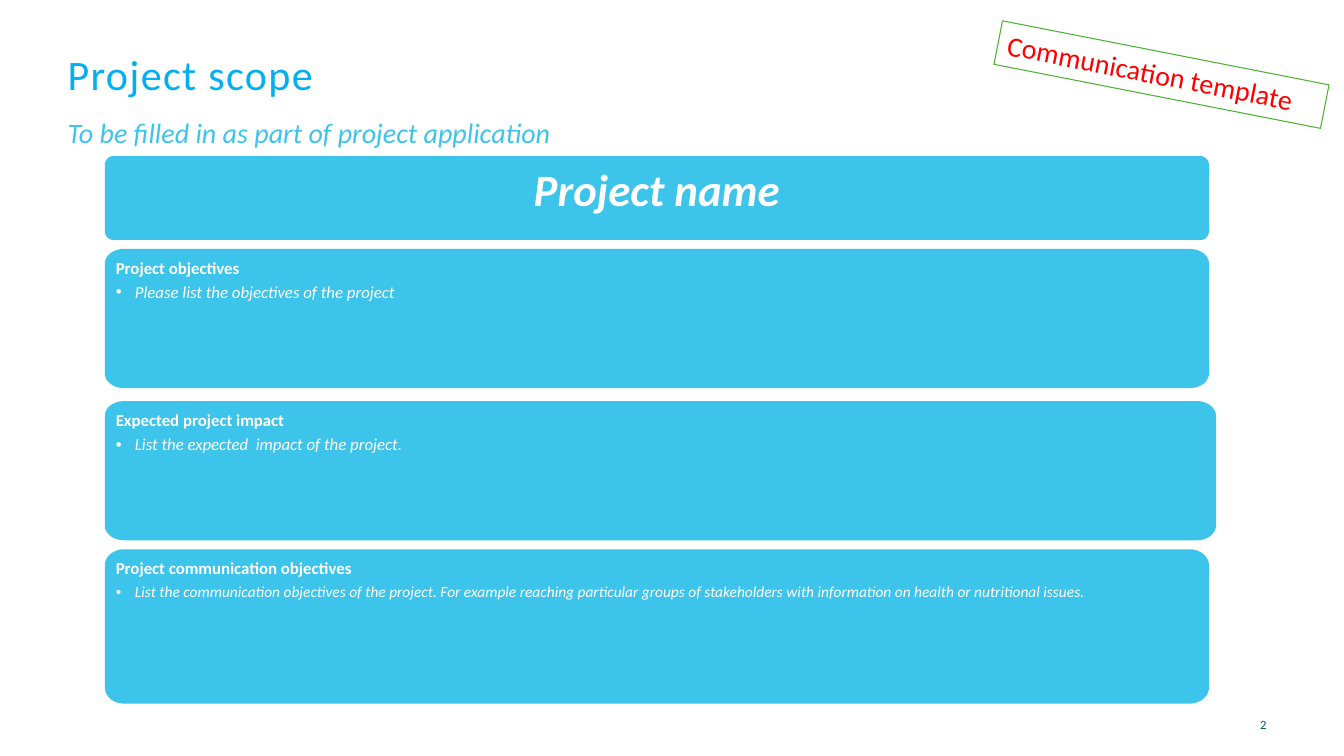
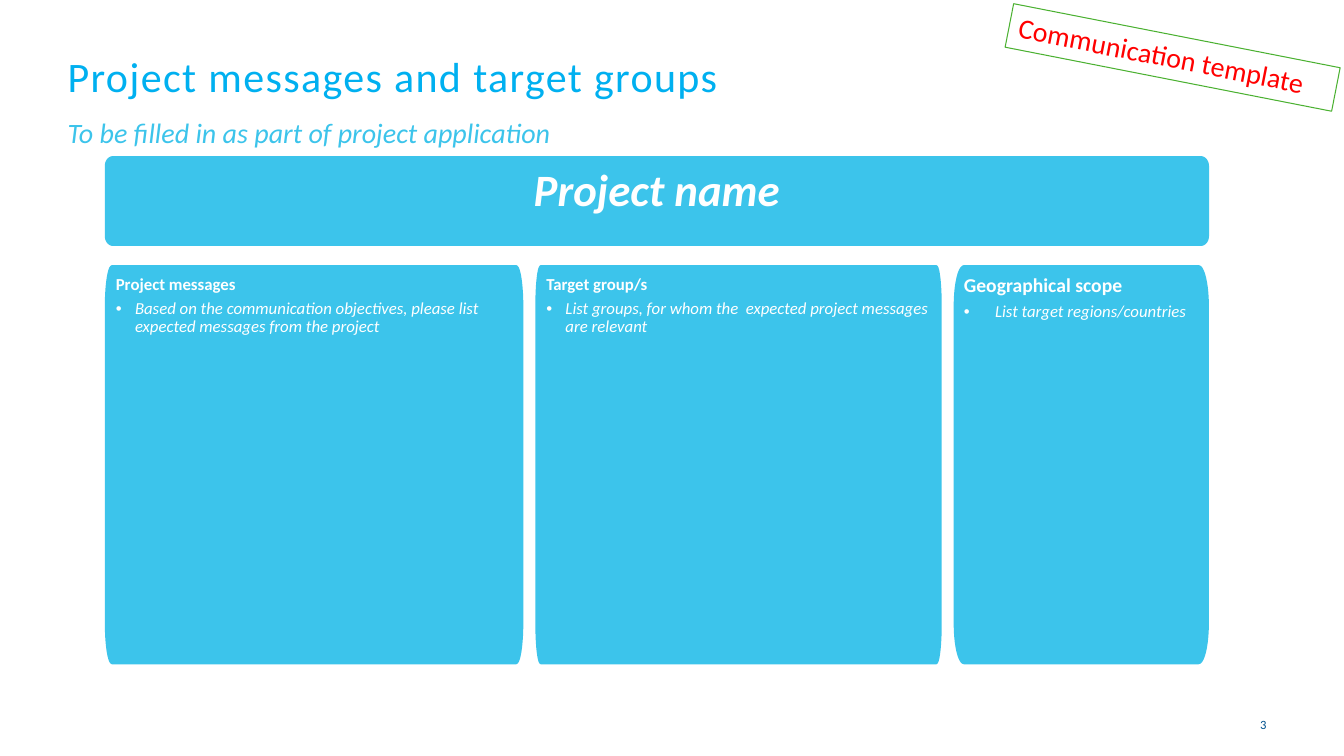
import math
from dataclasses import dataclass

from lxml import etree
from pptx import Presentation
from pptx.dml.color import RGBColor
from pptx.enum.shapes import MSO_SHAPE
from pptx.enum.text import MSO_ANCHOR, MSO_AUTO_SIZE, PP_ALIGN
from pptx.oxml.ns import qn
from pptx.util import Emu, Inches, Pt

RECT = MSO_SHAPE.RECTANGLE
TOP, MIDDLE = MSO_ANCHOR.TOP, MSO_ANCHOR.MIDDLE
LEFT, CENTER, RIGHT = PP_ALIGN.LEFT, PP_ALIGN.CENTER, PP_ALIGN.RIGHT
NO_FIT, GROW = MSO_AUTO_SIZE.NONE, MSO_AUTO_SIZE.SHAPE_TO_FIT_TEXT

PANEL_BLUE = RGBColor(0x3C, 0xC4, 0xEB)
TITLE_BLUE = RGBColor(0x00, 0xB0, 0xF0)
NUMBER_BLUE = RGBColor(0x00, 0x52, 0x8E)
TAG_GREEN = RGBColor(0x4B, 0xB1, 0x31)
TAG_RED = RGBColor(0xFF, 0x00, 0x00)
WHITE = RGBColor(0xFF, 0xFF, 0xFF)

FONT = "Calibri"
SLIDE_W, SLIDE_H = Inches(13.33), Inches(7.5)
FIRST_NUMBER = 2
ARC_STEPS = 10
SPACE_AFTER_SHARE = 0.35

MARGIN, TEXT_W = 5.03, 90.02
PANEL_X, PANEL_W = 7.88, 82.0
BANNER_Y, BANNER_RX = 20.8, 0.53
ROW_RX = 1.35
COLUMN_Y, COLUMN_H, COLUMN_GAP = 35.2, 52.53, 1.05


@dataclass(frozen=True)
class Box:
    """Left, top, width and height in percent of the slide."""
    x: float
    y: float
    w: float
    h: float

    def emu(self) -> tuple[Emu, Emu, Emu, Emu]:
        return (Emu(round(self.x * SLIDE_W / 100)), Emu(round(self.y * SLIDE_H / 100)),
                Emu(round(self.w * SLIDE_W / 100)), Emu(round(self.h * SLIDE_H / 100)))


@dataclass(frozen=True)
class Panel:
    heading: str
    hint: str
    box: Box
    rx: float
    heading_size: int = 12
    hint_size: int = 12
    indent: float = 0.19
    inset: float = 0.1


@dataclass(frozen=True)
class Page:
    title: str
    title_y: float
    banner_h: float
    tag_x: float
    tag_y: float
    panels: tuple[Panel, ...]


def row(heading: str, hint: str, y: float, h: float, w: float = PANEL_W,
        hint_size: int = 12) -> Panel:
    return Panel(heading, hint, Box(PANEL_X, y, w, h), ROW_RX, hint_size=hint_size)


def columns(*specs: tuple[str, str, float, float, dict]) -> tuple[Panel, ...]:
    panels, x = [], PANEL_X
    for heading, hint, w, rx, options in specs:
        panels.append(Panel(heading, hint, Box(x, COLUMN_Y, w, COLUMN_H), rx, **options))
        x += w + COLUMN_GAP
    return tuple(panels)


PAGES = (
    Page("Project scope", 7.2, 10.8, 74.04, 6.93, (
        row("Project objectives", "Please list the objectives of the project", 33.07, 18.13),
        row("Expected project impact", "List the expected  impact of the project.",
            53.2, 18.13, w=82.52),
        row("Project communication objectives",
            "List the communication objectives of the project. For example reaching "
            "particular groups of stakeholders with information on health or "
            "nutritional issues.", 72.8, 20.13, hint_size=11),
    )),
    Page("Project messages and target groups", 7.47, 11.6, 74.87, 4.67, columns(
        ("Project messages", "Based on the communication objectives, please list "
         "expected messages from the project", 30.98, 0.47, {}),
        ("Target group/s", "List groups, for whom the  expected project messages "
         "are relevant", 30.08, 0.34, {}),
        ("Geographical scope", "List target regions/countries", 18.83, 0.7,
         {"heading_size": 14, "indent": 0.31, "inset": 0.09}),
    )),
)


def set_all(target, **values) -> None:
    for name, value in values.items():
        setattr(target, name, value)


def frame(sp, inset: float | None = None, anchor=TOP, fit=NO_FIT):
    tf = sp.text_frame
    set_all(tf, word_wrap=True, auto_size=fit, vertical_anchor=anchor)
    if inset is not None:
        sides = ("margin_left", "margin_top", "margin_right", "margin_bottom")
        set_all(tf, **dict.fromkeys(sides, Inches(inset)))
    return tf


def write(p, text: str, size: int, color: RGBColor, align=LEFT, spacing: float = 1.0,
          after: float = 0, tracking: float = 0, **style) -> None:
    set_all(p, alignment=align, line_spacing=spacing, space_after=Pt(after), space_before=Pt(0))
    r = p.add_run()
    r.text = text
    set_all(r.font, name=FONT, size=Pt(size), **style)
    r.font.color.rgb = color
    if tracking:
        r.font._element.set("spc", str(int(tracking * 100)))


def bullet(p, indent: float) -> None:
    pPr = p._p.get_or_add_pPr()
    pPr.set("marL", str(Inches(indent)))
    pPr.set("indent", str(-Inches(indent)))
    etree.SubElement(pPr, qn("a:buFont")).set("typeface", "Arial")
    etree.SubElement(pPr, qn("a:buChar")).set("char", "•")


def rounded_panel(s, box: Box, rx: float):
    x, y, w, h = box.emu()
    dx, dy = rx * SLIDE_W / 100, h / 10
    corners = ((x + dx, y + dy, 180), (x + w - dx, y + dy, 270),
               (x + w - dx, y + h - dy, 0), (x + dx, y + h - dy, 90))
    points = []
    for cx, cy, start in corners:
        for step in range(ARC_STEPS + 1):
            angle = math.radians(start + 90 * step / ARC_STEPS)
            points.append((round(cx + dx * math.cos(angle)), round(cy + dy * math.sin(angle))))
    builder = s.shapes.build_freeform(*points[0])
    builder.add_line_segments(points[1:], close=True)
    sp = builder.convert_to_shape()
    sp.shadow.inherit = False
    sp.fill.solid()
    sp.fill.fore_color.rgb = PANEL_BLUE
    sp.line.color.rgb = PANEL_BLUE
    sp.line.width = Pt(1.5)
    return sp


def add_banner(s, h: float) -> None:
    sp = rounded_panel(s, Box(PANEL_X, BANNER_Y, PANEL_W, h), BANNER_RX)
    write(frame(sp, 0.1).paragraphs[0], "Project name", 32, WHITE, CENTER, 0.9,
          32 * SPACE_AFTER_SHARE, bold=True, italic=True)


def add_panel(s, panel: Panel) -> None:
    tf = frame(rounded_panel(s, panel.box, panel.rx), panel.inset)
    write(tf.paragraphs[0], panel.heading, panel.heading_size, WHITE, spacing=0.9,
          after=panel.heading_size * SPACE_AFTER_SHARE, bold=True)
    p = tf.add_paragraph()
    bullet(p, panel.indent)
    write(p, panel.hint, panel.hint_size, WHITE, spacing=0.9,
          after=panel.hint_size * SPACE_AFTER_SHARE, bold=False, italic=True)


def add_title(s, text: str, y: float) -> None:
    sp = s.shapes.title
    x, top, w, h = Box(MARGIN, y, TEXT_W, 6.53).emu()
    set_all(sp, left=x, top=top, width=w, height=h)
    write(frame(sp, 0).paragraphs[0], text, 30, TITLE_BLUE, spacing=0.9, tracking=1)


def add_subtitle(s) -> None:
    sp = s.shapes.add_textbox(*Box(MARGIN, 15.07, TEXT_W, 5.73).emu())
    write(frame(sp, 0, MIDDLE).paragraphs[0], "To be filled in as part of project application",
          20, PANEL_BLUE, spacing=0.8, after=12, italic=True)


def add_number(s, number: int) -> None:
    sp = s.shapes.add_textbox(*Box(92.5, 94.67, 2.48, 2.4).emu())
    p = frame(sp, anchor=MIDDLE).paragraphs[0]
    write(p, str(number), 9, NUMBER_BLUE, RIGHT, tracking=0.5)
    field = p.runs[0]._r
    field.tag = qn("a:fld")
    field.set("id", "{B6F15528-21DE-4FAA-801E-634DDDAF4B2B}")
    field.set("type", "slidenum")


def add_tag(s, x: float, y: float) -> None:
    sp = s.shapes.add_shape(RECT, *Box(x, y, 24.76, 5.87).emu())
    sp.shadow.inherit = False
    sp.rotation = 11.1
    sp.fill.background()
    sp.line.color.rgb = TAG_GREEN
    sp.line.width = Pt(0.75)
    write(frame(sp, fit=GROW).paragraphs[0], "Communication template", 20, TAG_RED)


def add_page(prs, page: Page, number: int) -> None:
    s = prs.slides.add_slide(prs.slide_layouts.get_by_name("Title Only"))
    add_banner(s, page.banner_h)
    add_title(s, page.title, page.title_y)
    add_number(s, number)
    add_subtitle(s)
    for panel in page.panels:
        add_panel(s, panel)
    add_tag(s, page.tag_x, page.tag_y)


def main() -> None:
    prs = Presentation()
    set_all(prs, slide_width=SLIDE_W, slide_height=SLIDE_H)
    prs.element.set("firstSlideNum", str(FIRST_NUMBER))
    for number, page in enumerate(PAGES, FIRST_NUMBER):
        add_page(prs, page, number)
    prs.save("out.pptx")


if __name__ == "__main__":
    main()
